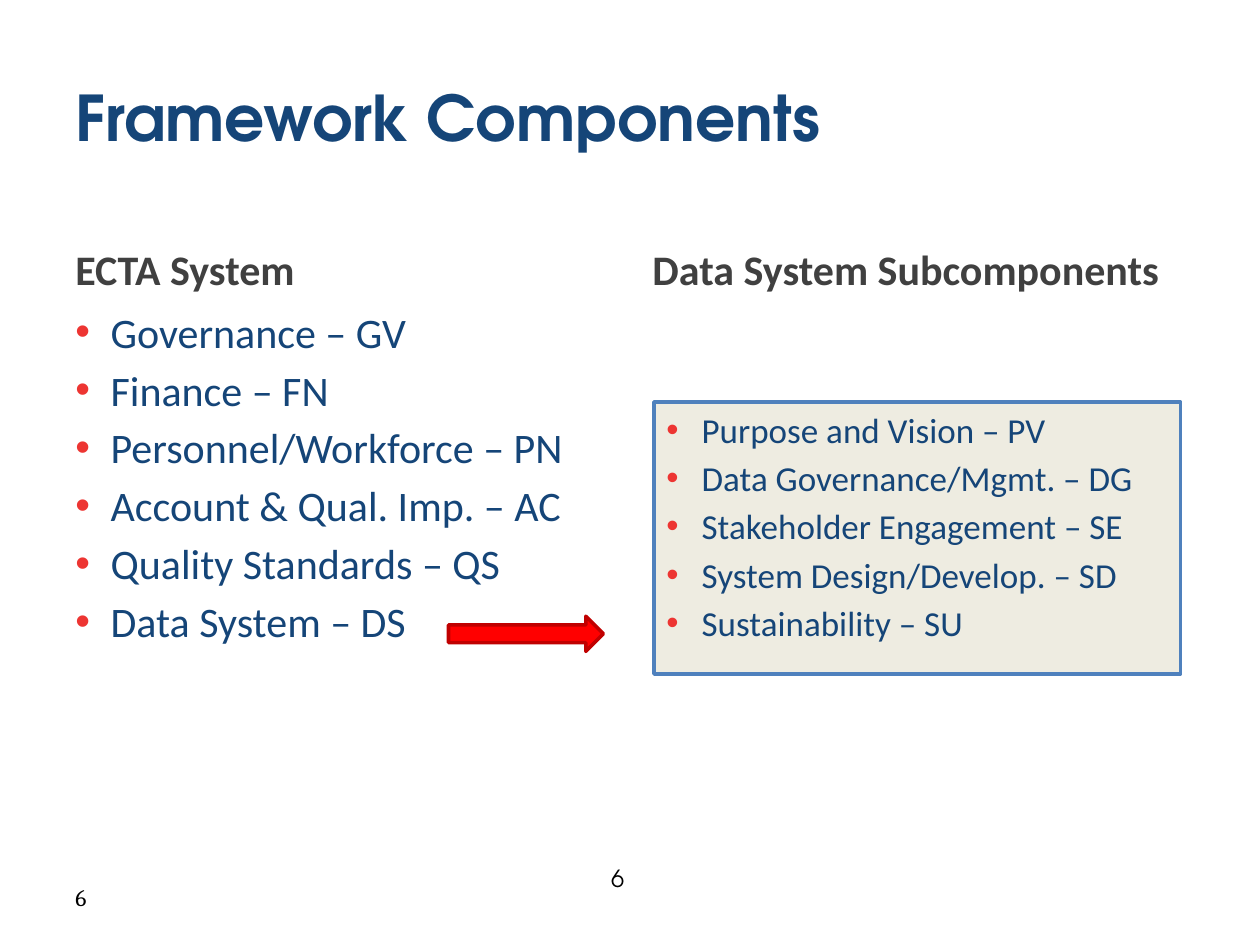
from lxml import etree
from pptx import Presentation
from pptx.dml.color import RGBColor
from pptx.enum import shapes, text
from pptx.oxml import ns
from pptx.util import Inches, Pt

NAVY, GREY, RED = "154578", "404040", "ED3532"
HEAD_FONT, BODY_FONT = "TeX Gyre Adventor", "Calibri"
MID, LOW, TOP = (text.MSO_ANCHOR.MIDDLE, text.MSO_ANCHOR.BOTTOM,
                 text.MSO_ANCHOR.TOP)

SYSTEM = ["Governance – GV", "Finance – FN", "Personnel/Workforce – PN",
          "Account & Qual. Imp. – AC", "Quality Standards – QS",
          "Data System – DS"]
PARTS = ["Purpose and Vision – PV", "Data Governance/Mgmt. – DG",
         "Stakeholder Engagement – SE", "System Design/Develop. – SD",
         "Sustainability – SU"]


def color(code):
    return RGBColor.from_string(code)


def place(shape, box):
    shape.left, shape.top, shape.width, shape.height = map(Inches, box)


def paint(shape, fill, line=None):
    shape.shadow.inherit = False
    shape.fill.solid()
    shape.fill.fore_color.rgb = color(fill)
    if line:
        shape.line.color.rgb = color(line)
        shape.line.width = Pt(2)
    else:
        shape.line.fill.background()


def add_run(para, words, size, font, code, bold=False):
    para.alignment = text.PP_ALIGN.LEFT
    run = para.add_run()
    run.text = words
    run.font.size = Pt(size)
    run.font.name = font
    run.font.bold = bold
    run.font.color.rgb = color(code)


def set_frame(shape, anchor):
    frame = shape.text_frame
    frame.word_wrap = True
    frame.auto_size = text.MSO_AUTO_SIZE.NONE
    frame.vertical_anchor = anchor
    return frame


def add_label(slide, box, words, size, font, code, bold=False, anchor=MID):
    frame = set_frame(slide.shapes.add_textbox(*map(Inches, box)), anchor)
    add_run(frame.paragraphs[0], words, size, font, code, bold)
    return frame


def add_bullet(para):
    props = para._p.get_or_add_pPr()
    props.set("marL", str(Inches(0.28)))
    props.set("indent", str(-Inches(0.28)))
    tint = etree.SubElement(props, ns.qn("a:buClr"))
    etree.SubElement(tint, ns.qn("a:srgbClr")).set("val", RED)
    etree.SubElement(props, ns.qn("a:buFont")).set("typeface", "Arial")
    etree.SubElement(props, ns.qn("a:buChar")).set("char", "•")


def add_list(slide, box, items, size, fill, line=None):
    shape = slide.shapes.add_shape(shapes.MSO_SHAPE.RECTANGLE,
                                   *map(Inches, box))
    paint(shape, fill, line)
    frame = set_frame(shape, TOP)
    for i, item in enumerate(items):
        para = frame.paragraphs[0] if i == 0 else frame.add_paragraph()
        add_bullet(para)
        if i:
            para.space_before = Pt(round(size * 0.18, 1))
        add_run(para, item, size, BODY_FONT, NAVY)


def add_arrow(slide, box):
    shape = slide.shapes.add_shape(shapes.MSO_SHAPE.RIGHT_ARROW,
                                   *map(Inches, box))
    paint(shape, "FF0000", "C00000")


def main():
    deck = Presentation()
    deck.slide_width, deck.slide_height = Inches(10), Inches(7.5)
    slide = deck.slides.add_slide(deck.slide_layouts[5])

    # Title
    title = slide.shapes.title
    place(title, (0.5, 0.3, 9, 1.25))
    add_run(set_frame(title, MID).paragraphs[0], "Framework Components",
            36, HEAD_FONT, NAVY, True)

    # Page numbers
    page = add_label(slide, (4.78, 6.77, 2.33, 0.4), "6", 13.5,
                     HEAD_FONT, "000000")
    page.margin_left = page.margin_right = Inches(0.07)
    page.margin_top = page.margin_bottom = Inches(0.04)
    add_label(slide, (0.5, 6.92, 2.33, 0.4), "6", 13.5, "Cambria", "000000")

    # Column headings
    for left, words in ((0.5, "ECTA System"),
                        (5.08, "Data System Subcomponents")):
        add_label(slide, (left, 1.68, 4.42, 0.7), words, 24, BODY_FONT,
                  GREY, True, LOW)

    # Lists, with the arrow from the last item to its parts
    add_list(slide, (0.5, 2.38, 4.43, 3.12), SYSTEM, 24, "FFFFFF")
    add_list(slide, (5.19, 3.19, 4.18, 2.16), PARTS, 20, "EEECE1", "4F81BD")
    add_arrow(slide, (3.56, 4.89, 1.23, 0.28))

    deck.save("out.pptx")


if __name__ == "__main__":
    main()
